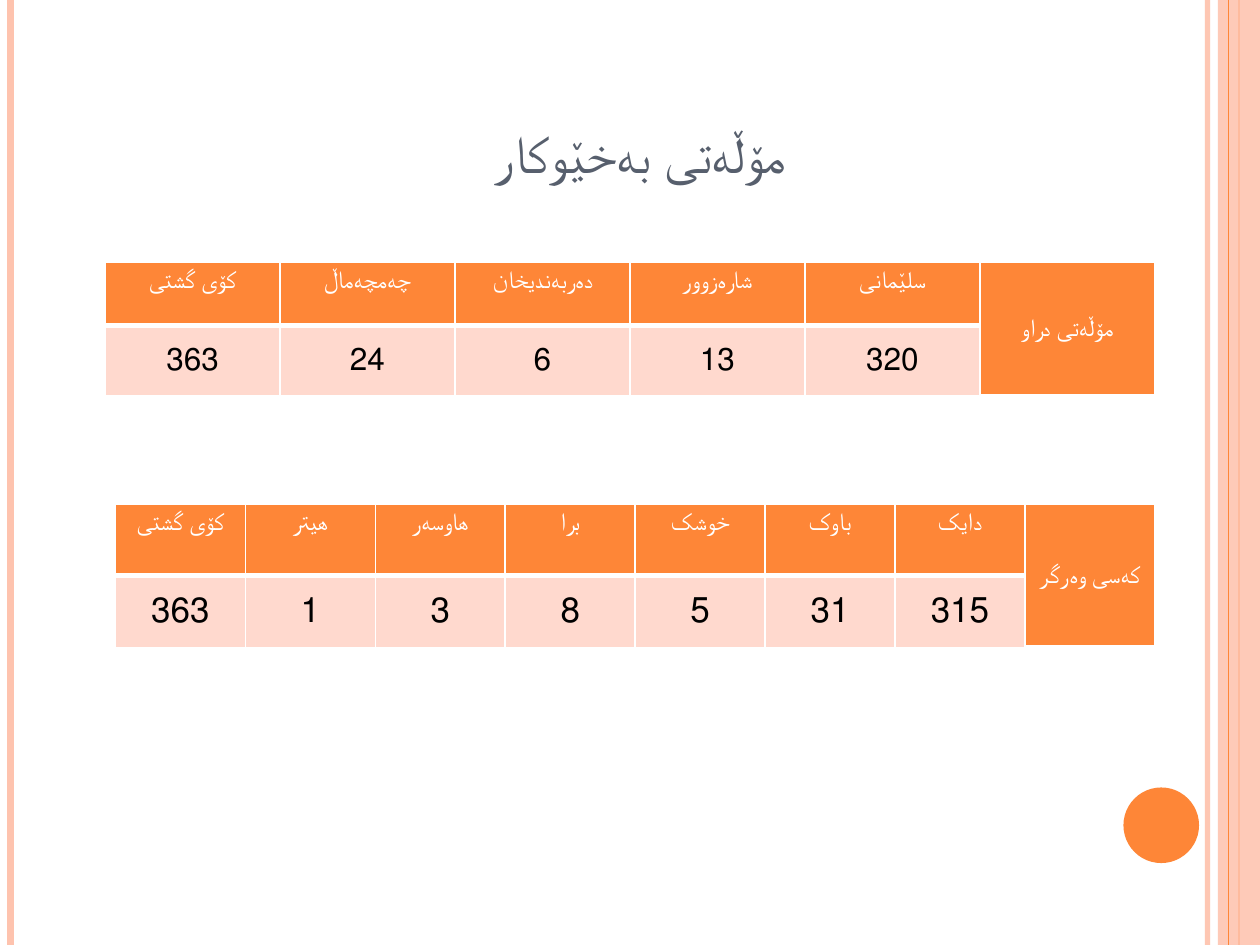
"""Build a slide with two right-to-left tables of carer leave figures."""
from lxml.etree import SubElement
from pptx import Presentation
from pptx.dml.color import RGBColor
from pptx.enum.shapes import MSO_CONNECTOR, MSO_SHAPE
from pptx.enum.text import MSO_ANCHOR, PP_ALIGN
from pptx.oxml.ns import qn
from pptx.util import Pt

THEME = {
    "accent": "FE8637", "pale": "FEC3AE", "body": "FFD9CE",
    "white": "FFFFFF", "black": "000000", "title": "575F6D",
    "heading_font": "Lato", "body_font": "Roboto",
    "title_size": 30, "header_size": 14,
}
WIDTH, HEIGHT = 720, 540
TITLE = "مۆڵەتی بەخێوكار"
RULES = [(690, "pale", 3, 93), (6, "pale", 4.5, 100), (708, "accent", 1.5, 100)]
EDGE_RULE = (702, "accent", 0.75, 100)
TABLES = [
    {
        "box": (60, 150, 600), "rows": (36, 40.3),
        "font": "body_font", "size": 18, "label": "مۆڵەتی دراو",
        "data": [("کۆی گشتی", 363), ("چەمچەماڵ", 24), ("دەربەندیخان", 6),
                 ("شارەزوور", 13), ("سلێمانی", 320)],
    },
    {
        "box": (66, 288, 594), "rows": (41, 41),
        "font": "heading_font", "size": 20, "label": "کەسی وەرگر",
        "data": [("کۆی گشتی", 363), ("هیتر", 1), ("هاوسەر", 3), ("برا", 8),
                 ("خوشک", 5), ("باوک", 31), ("دایک", 315)],
    },
]


def color(name):
    return RGBColor.from_string(THEME[name])


def set_alpha(element, percent):
    if percent < 100:
        target = next(element.iter(qn("a:srgbClr")))
        SubElement(target, qn("a:alpha"), val=str(percent * 1000))


def add_rule(slide, x, color_name, width, opacity):
    rule = slide.shapes.add_connector(
        MSO_CONNECTOR.STRAIGHT, Pt(x), Pt(0), Pt(x), Pt(HEIGHT))
    rule.line.color.rgb = color(color_name)
    rule.line.width = Pt(width)
    properties = rule.element.spPr
    set_alpha(properties, opacity)
    SubElement(properties, qn("a:effectLst"))


def add_block(slide, kind, box, color_name, opacity=100):
    shape = slide.shapes.add_shape(kind, *map(Pt, box))
    shape.shadow.inherit = False
    shape.fill.solid()
    shape.fill.fore_color.rgb = color(color_name)
    shape.line.fill.background()
    set_alpha(shape.element.spPr, opacity)


def write(paragraph, text, size, font_name, color_name):
    paragraph.alignment = PP_ALIGN.CENTER
    run = paragraph.add_run()
    run.text = text
    run.font.size = Pt(size)
    run.font.name = THEME[font_name]
    run.font.color.rgb = color(color_name)
    return run


def set_borders(cell, bottom):
    properties = cell._tc.get_or_add_tcPr()
    for index, (side, width) in enumerate(
            [("lnL", 1), ("lnR", 1), ("lnT", 1), ("lnB", bottom)]):
        line = SubElement(properties, qn(f"a:{side}"), w=str(Pt(width)))
        properties.insert(index, line)
        fill = SubElement(line, qn("a:solidFill"))
        SubElement(fill, qn("a:srgbClr"), val=THEME["white"])


def fill_cell(cell, text, size, font_name, header, middle):
    cell.fill.solid()
    cell.fill.fore_color.rgb = color("accent" if header else "body")
    cell.vertical_anchor = MSO_ANCHOR.MIDDLE if middle else MSO_ANCHOR.TOP
    paragraph = cell.text_frame.paragraphs[0]
    write(paragraph, text, size, font_name, "white" if header else "black")
    paragraph._p.get_or_add_pPr().set("rtl", "1")
    set_borders(cell, 3 if header else 1)


def add_leave_table(slide, content):
    left, top, width = content["box"]
    data, rows, font_name = content["data"], content["rows"], content["font"]
    columns = len(data) + 1
    table = slide.shapes.add_table(
        2, columns, Pt(left), Pt(top), Pt(width), Pt(sum(rows))).table
    for column in table.columns:
        column.width = Pt(width / columns)
    for row, height in zip(table.rows, rows):
        row.height = Pt(height)
    for index, (name, value) in enumerate(data):
        fill_cell(table.cell(0, index), name, THEME["header_size"],
                  font_name, True, False)
        fill_cell(table.cell(1, index), str(value), content["size"],
                  font_name, False, True)
    label = table.cell(0, columns - 1)
    label.merge(table.cell(1, columns - 1))
    fill_cell(label, content["label"], THEME["header_size"],
              "heading_font", True, True)


def add_title(slide):
    title = slide.shapes.title
    title.left, title.top, title.width, title.height = map(Pt, (72, 60, 588, 54))
    title.text_frame.vertical_anchor = MSO_ANCHOR.MIDDLE
    run = write(title.text_frame.paragraphs[0], TITLE, THEME["title_size"],
                "heading_font", "title")
    run.font._element.set("cap", "small")


def main():
    presentation = Presentation()
    presentation.slide_width, presentation.slide_height = Pt(WIDTH), Pt(HEIGHT)
    slide = presentation.slides.add_slide(presentation.slide_layouts[5])
    slide.background.fill.solid()
    slide.background.fill.fore_color.rgb = color("white")
    for rule in RULES:
        add_rule(slide, *rule)
    add_block(slide, MSO_SHAPE.RECTANGLE, (696, 0, 24, HEIGHT), "pale", 87)
    add_rule(slide, *EDGE_RULE)
    add_block(slide, MSO_SHAPE.OVAL, (642, 450, 43.2, 43.2), "accent")
    add_title(slide)
    for content in TABLES:
        add_leave_table(slide, content)
    presentation.save("out.pptx")


if __name__ == "__main__":
    main()
